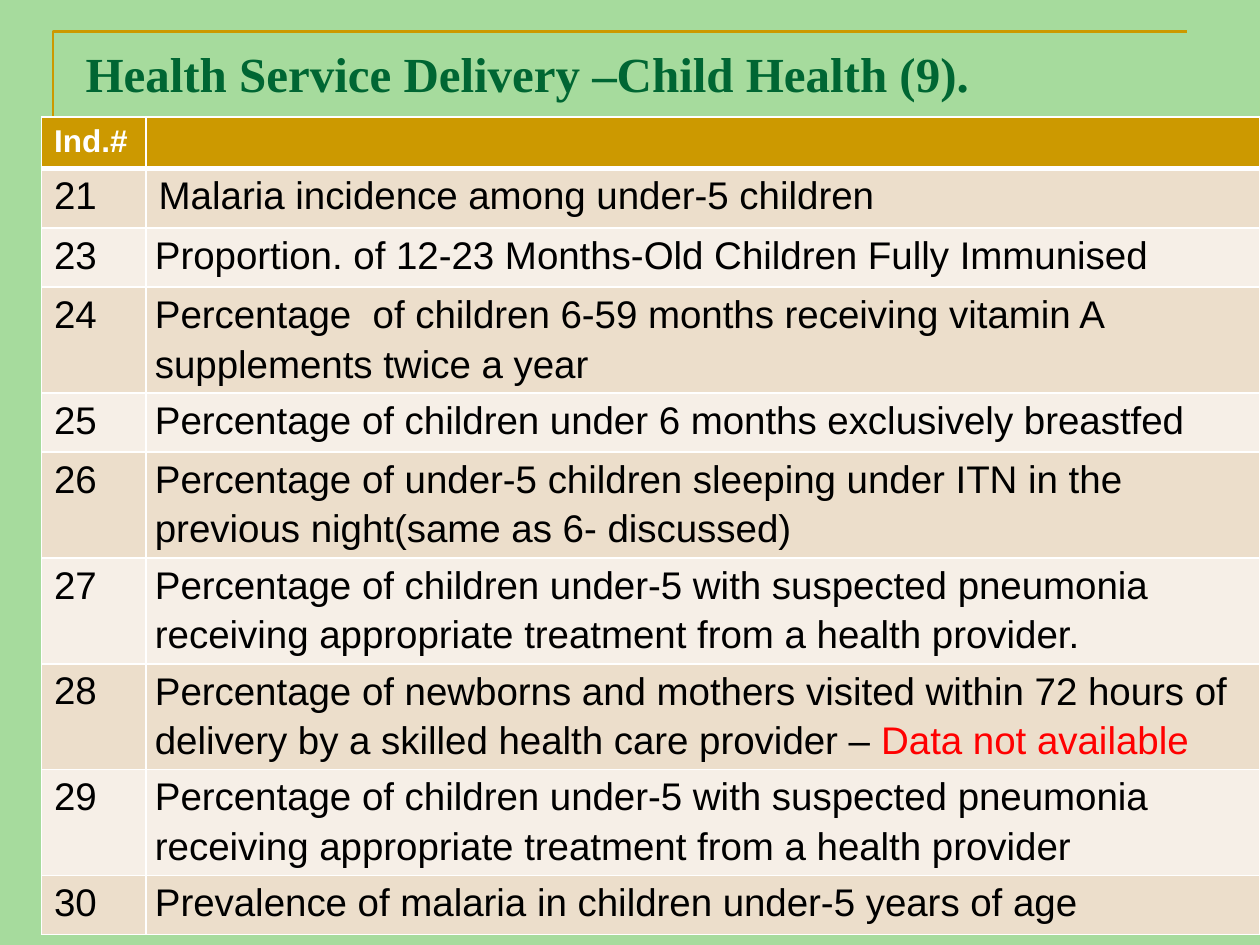
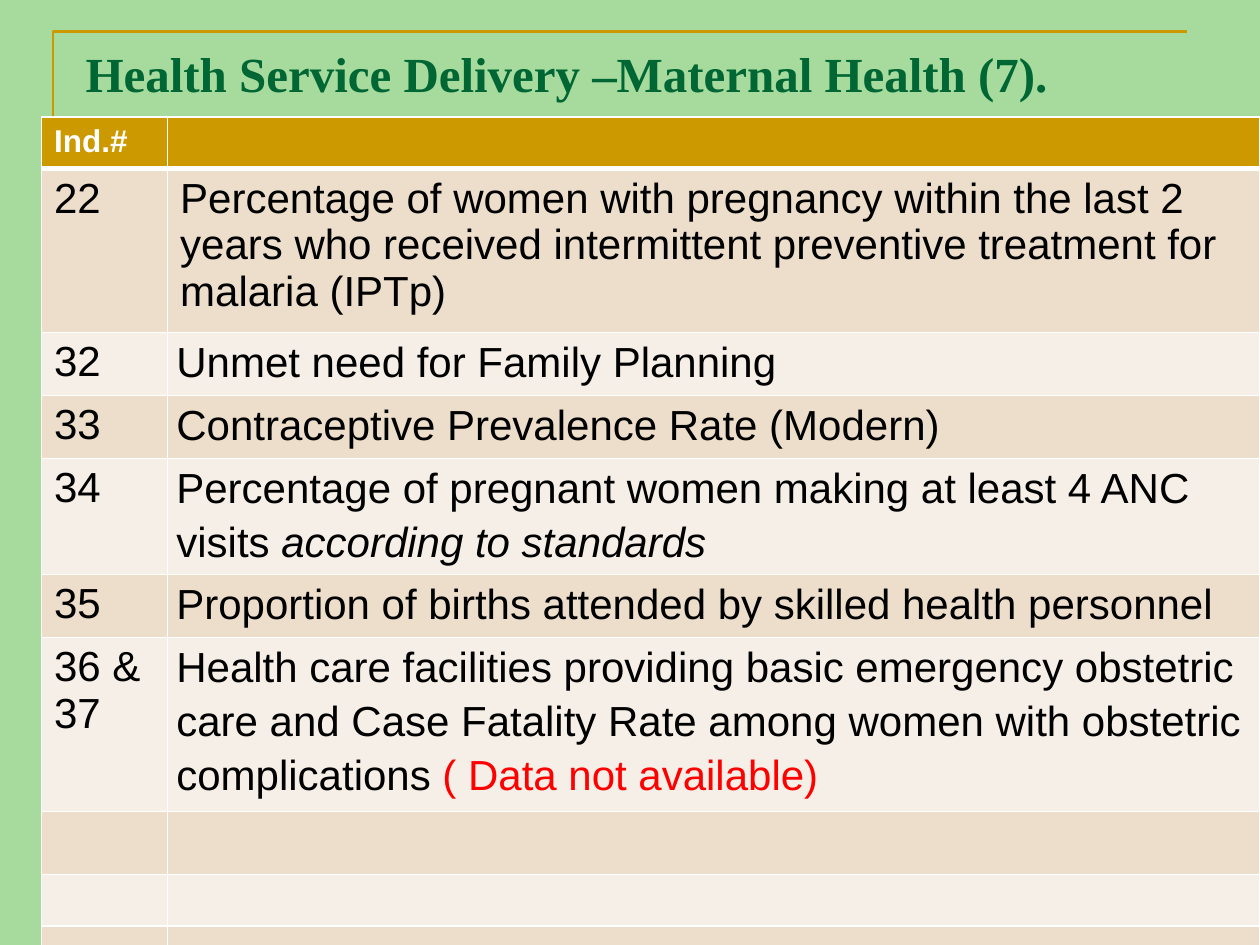
import dataclasses
from typing import Optional

import lxml.etree
import pptx
import pptx.dml.color
import pptx.enum.text
import pptx.oxml.ns
import pptx.presentation
import pptx.shapes.autoshape
import pptx.slide
import pptx.table
import pptx.util

Inches = pptx.util.Inches
Pt = pptx.util.Pt
RGBColor = pptx.dml.color.RGBColor


@dataclasses.dataclass(frozen=True)
class Theme:
    background: RGBColor = RGBColor(0xA6, 0xDB, 0x9D)
    gold: RGBColor = RGBColor(0xCC, 0x99, 0x00)
    title: RGBColor = RGBColor(0x00, 0x66, 0x33)
    bands: tuple[RGBColor, RGBColor] = (
        RGBColor(0xEC, 0xDE, 0xCB),
        RGBColor(0xF6, 0xEF, 0xE7),
    )
    text: RGBColor = RGBColor(0x00, 0x00, 0x00)
    white: RGBColor = RGBColor(0xFF, 0xFF, 0xFF)
    alert: RGBColor = RGBColor(0xFF, 0x00, 0x00)
    title_font: str = "Times New Roman"
    body_font: str = "Arial"
    title_size: int = 28
    header_size: int = 18
    frame_width: float = 1.5
    border_width: int = 1
    header_rule_width: int = 3


THEME = Theme()


@dataclasses.dataclass(frozen=True)
class Indicator:
    height: float
    number: str = ""
    text: str = ""
    alert: str = ""
    emphasis: str = ""


@dataclasses.dataclass(frozen=True)
class IndicatorSlide:
    title: str
    number_width: float
    text_size: int
    indicators: tuple[Indicator, ...]


@dataclasses.dataclass(frozen=True)
class CellStyle:
    fill: RGBColor
    color: RGBColor
    size: int
    bold: bool = False
    horizontal_inset: float = 0.1
    vertical_inset: float = 0.05
    line_spacing: Optional[float] = None


TABLE_LEFT, TABLE_TOP, TABLE_WIDTH = 0.33, 0.93, 9.67
HEADER = Indicator(0.41, "Ind.#")

SLIDES = (
    IndicatorSlide(
        "Health Service Delivery –Child Health (9).",
        0.83,
        22,
        (
            Indicator(0.47, "21", "Malaria incidence among under-5 children"),
            Indicator(0.47, "23", "Proportion. of 12-23 Months-Old Children Fully Immunised"),
            Indicator(
                0.84,
                "24",
                "Percentage  of children 6-59 months receiving vitamin A supplements twice a year",
            ),
            Indicator(0.47, "25", "Percentage of children under 6 months exclusively breastfed"),
            Indicator(
                0.84,
                "26",
                "Percentage of under-5 children sleeping under ITN in the previous night"
                "(same as 6- discussed)",
            ),
            Indicator(
                0.84,
                "27",
                "Percentage of children under-5 with suspected pneumonia receiving "
                "appropriate treatment from a health provider.",
            ),
            Indicator(
                0.84,
                "28",
                "Percentage of newborns and mothers visited within 72 hours of delivery "
                "by a skilled health care provider – ",
                alert="Data not available",
            ),
            Indicator(
                0.84,
                "29",
                "Percentage of children under-5 with suspected pneumonia receiving "
                "appropriate treatment from a health provider",
            ),
            Indicator(0.47, "30", "Prevalence of malaria in children under-5 years of age"),
        ),
    ),
    IndicatorSlide(
        "Health Service Delivery –Maternal Health (7).",
        1,
        24,
        (
            Indicator(
                1.3,
                "22",
                "Percentage of women with pregnancy within the last 2 years who received "
                "intermittent preventive treatment for malaria (IPTp)",
            ),
            Indicator(0.5, "32", "Unmet need for Family Planning"),
            Indicator(0.5, "33", "Contraceptive Prevalence Rate (Modern)"),
            Indicator(
                0.92,
                "34",
                "Percentage of pregnant women making at least 4 ANC visits ",
                emphasis="according to standards",
            ),
            Indicator(0.5, "35", "Proportion of births attended by skilled health personnel"),
            Indicator(
                1.38,
                "36 & 37",
                "Health care facilities providing basic emergency obstetric care and "
                "Case Fatality Rate among women with obstetric complications ",
                alert="( Data not available)",
            ),
            Indicator(0.5),
            Indicator(0.41),
            Indicator(0.41),
        ),
    ),
)


def set_borders(cell: pptx.table._Cell, top: float, bottom: float) -> None:
    properties = cell._tc.get_or_add_tcPr()
    widths = {"L": THEME.border_width, "R": THEME.border_width, "T": top, "B": bottom}
    for side, width in widths.items():
        line = lxml.etree.SubElement(
            properties, pptx.oxml.ns.qn(f"a:ln{side}"), w=str(Pt(width))
        )
        fill = lxml.etree.SubElement(line, pptx.oxml.ns.qn("a:solidFill"))
        lxml.etree.SubElement(fill, pptx.oxml.ns.qn("a:srgbClr"), val=str(THEME.white))


def write_cell(
    cell: pptx.table._Cell, style: CellStyle, text: str, alert: str = "", emphasis: str = ""
) -> None:
    cell.fill.solid()
    cell.fill.fore_color.rgb = style.fill
    cell.margin_left = cell.margin_right = Inches(style.horizontal_inset)
    cell.margin_top = cell.margin_bottom = Inches(style.vertical_inset)
    if not text:
        return
    paragraph = cell.text_frame.paragraphs[0]
    paragraph.font.name = THEME.body_font
    paragraph.font.size = Pt(style.size)
    paragraph.font.bold = style.bold
    paragraph.font.color.rgb = style.color
    paragraph.line_spacing = style.line_spacing
    paragraph.add_run().text = text
    if alert:
        run = paragraph.add_run()
        run.text = alert
        run.font.color.rgb = THEME.alert
    if emphasis:
        run = paragraph.add_run()
        run.text = emphasis
        run.font.italic = True


def add_indicator_table(slide: pptx.slide.Slide, content: IndicatorSlide) -> None:
    rows = (HEADER, *content.indicators)
    table = slide.shapes.add_table(
        len(rows),
        2,
        Inches(TABLE_LEFT),
        Inches(TABLE_TOP),
        Inches(TABLE_WIDTH),
        Inches(sum(row.height for row in rows)),
    ).table
    table.first_row = table.horz_banding = False
    table.columns[0].width = Inches(content.number_width)
    table.columns[1].width = Inches(TABLE_WIDTH - content.number_width)
    for index, row in enumerate(rows):
        table.rows[index].height = Inches(row.height)
        if index == 0:
            number_style = CellStyle(THEME.gold, THEME.white, THEME.header_size, bold=True)
        else:
            number_style = CellStyle(
                THEME.bands[(index - 1) % 2], THEME.text, content.text_size
            )
        text_style = number_style
        if index > 1 and row.text:
            text_style = dataclasses.replace(
                number_style, horizontal_inset=0.07, vertical_inset=0, line_spacing=1.15
            )
        top = THEME.header_rule_width if index == 1 else THEME.border_width
        bottom = THEME.header_rule_width if index == 0 else THEME.border_width
        for column in range(2):
            set_borders(table.cell(index, column), top, bottom)
        write_cell(table.cell(index, 0), number_style, row.number)
        write_cell(table.cell(index, 1), text_style, row.text, row.alert, row.emphasis)


def add_frame(slide: pptx.slide.Slide) -> pptx.shapes.autoshape.Shape:
    builder = slide.shapes.build_freeform(Inches(0.42), Inches(0.92))
    builder.add_line_segments(
        [(Inches(0.42), Inches(0.25)), (Inches(9.42), Inches(0.25))], close=False
    )
    frame = builder.convert_to_shape()
    frame.shadow.inherit = False
    frame.fill.background()
    frame.line.color.rgb = THEME.gold
    frame.line.width = Pt(THEME.frame_width)
    return frame


def format_title(title: pptx.shapes.autoshape.Shape, text: str) -> None:
    title.left, title.top = Inches(0.58), Inches(0.25)
    title.width, title.height = Inches(8.92), Inches(0.66)
    title.text_frame.text = text
    title.text_frame.auto_size = pptx.enum.text.MSO_AUTO_SIZE.NONE
    title.text_frame.vertical_anchor = pptx.enum.text.MSO_ANCHOR.MIDDLE
    paragraph = title.text_frame.paragraphs[0]
    paragraph.alignment = pptx.enum.text.PP_ALIGN.LEFT
    paragraph.font.name = THEME.title_font
    paragraph.font.size = Pt(THEME.title_size)
    paragraph.font.bold = True
    paragraph.font.color.rgb = THEME.title


def add_indicator_slide(
    presentation: pptx.presentation.Presentation, content: IndicatorSlide
) -> None:
    slide = presentation.slides.add_slide(presentation.slide_layouts.get_by_name("Title Only"))
    title = slide.shapes.title
    format_title(title, content.title)
    title.element.addprevious(add_frame(slide).element)
    add_indicator_table(slide, content)


def main() -> None:
    presentation = pptx.Presentation()
    presentation.slide_width = Inches(10)
    presentation.slide_height = Inches(7.5)
    background = presentation.slide_master.background.fill
    background.solid()
    background.fore_color.rgb = THEME.background
    for content in SLIDES:
        add_indicator_slide(presentation, content)
    presentation.save("out.pptx")


if __name__ == "__main__":
    main()
